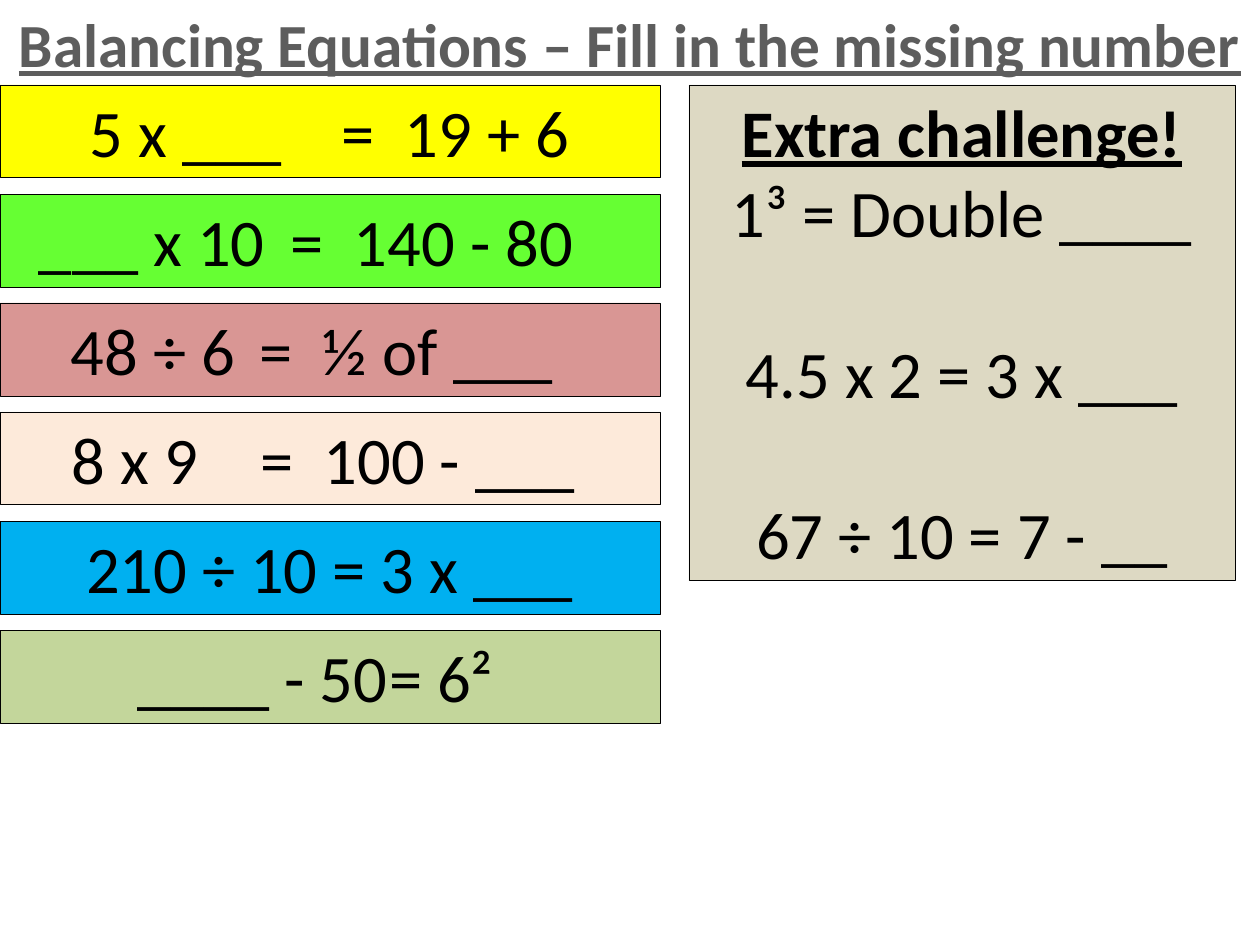
from dataclasses import dataclass

from lxml.etree import SubElement
from pptx import Presentation
from pptx.dml.color import RGBColor
from pptx.enum.shapes import MSO_SHAPE
from pptx.enum.text import MSO_ANCHOR, PP_ALIGN
from pptx.oxml.ns import qn
from pptx.util import Emu, Pt

PX = 914400 / 126
FONT = "Calibri"
BODY_SIZE = 38
LINE_PITCH = 46.4


@dataclass
class Equation:
    terms: list[str]
    starts: list[int]  # px from the left edge of the bar
    fill: str


EQUATIONS = [
    Equation(["5 x ___", "=", "19 + 6"], [90, 327, 390], "FFFF00"),
    Equation(["___ x 10", "=", "140 - 80"], [39, 324, 402], "66FF33"),
    Equation(["48 ÷ 6", "=", "½ of ___"], [71, 280, 358], "D99694"),
    Equation(["8 x 9", "=", "100 - ___"], [72, 258, 336], "FDEADA"),
    Equation(["210 ÷ 10 = 3 x ___"], [86], "00B0F0"),
    Equation(["____ - 50", "= 6²"], [137, 417], "C3D69B"),
]
CHALLENGES = ["1³ = Double ____", "4.5 x 2 = 3 x ___", "67 ÷ 10 = 7 - __"]


def px(n: int) -> Emu:
    return Emu(round(n * PX))


def rgb(color: str) -> RGBColor:
    return RGBColor.from_string(color)


def write(p, text: str, *, size=BODY_SIZE, color="000000", bold=False,
          underline=False, align=PP_ALIGN.CENTER, before=0) -> None:
    p.alignment = align
    p.space_before = Pt(before)
    r = p.add_run()
    r.text = text
    r.font.name = FONT
    r.font.size = Pt(size)
    r.font.bold = bold
    r.font.underline = underline
    r.font.color.rgb = rgb(color)


def add_panel(s, x: int, y: int, w: int, h: int, fill: str):
    sp = s.shapes.add_shape(MSO_SHAPE.RECTANGLE, px(x), px(y), px(w), px(h))
    sp.shadow.inherit = False
    sp.fill.solid()
    sp.fill.fore_color.rgb = rgb(fill)
    sp.line.color.rgb = rgb("000000")
    sp.line.width = Pt(0.5)
    tf = sp.text_frame
    tf.word_wrap = True
    tf.vertical_anchor = MSO_ANCHOR.TOP
    return tf


def add_equation(s, eq: Equation, y: int) -> None:
    tf = add_panel(s, 0, y, 660, 93, eq.fill)
    tf.margin_left = tf.margin_right = 0
    p = tf.paragraphs[0]
    write(p, "\t".join(eq.terms), align=PP_ALIGN.LEFT)
    # Indent the first term and set a tab stop for each later one
    first, *later = eq.starts
    pPr = p._p.get_or_add_pPr()
    pPr.set("marL", str(px(first)))
    pPr.set("indent", "0")
    if later:
        tabs = SubElement(pPr, qn("a:tabLst"))
        for start in later:
            SubElement(tabs, qn("a:tab"), pos=str(px(start)), algn="l")


def main() -> None:
    prs = Presentation()
    prs.slide_width, prs.slide_height = px(1260), px(945)
    s = prs.slides.add_slide(prs.slide_layouts[6])

    # Title
    tf = s.shapes.add_textbox(0, 0, px(1260), px(87)).text_frame
    tf.word_wrap = True
    write(tf.paragraphs[0], "Balancing Equations – Fill in the missing number",
          size=35, color="5D5D5D", bold=True, underline=True)

    # Equation bars
    for i, eq in enumerate(EQUATIONS):
        add_equation(s, eq, 85 + 109 * i)

    # Extra challenge
    tf = add_panel(s, 689, 85, 546, 496, "DDD9C3")
    write(tf.paragraphs[0], "Extra challenge!", bold=True, underline=True)
    for i, text in enumerate(CHALLENGES):
        write(tf.add_paragraph(), text, before=LINE_PITCH if i else 0)

    prs.save("out.pptx")


if __name__ == "__main__":
    main()
